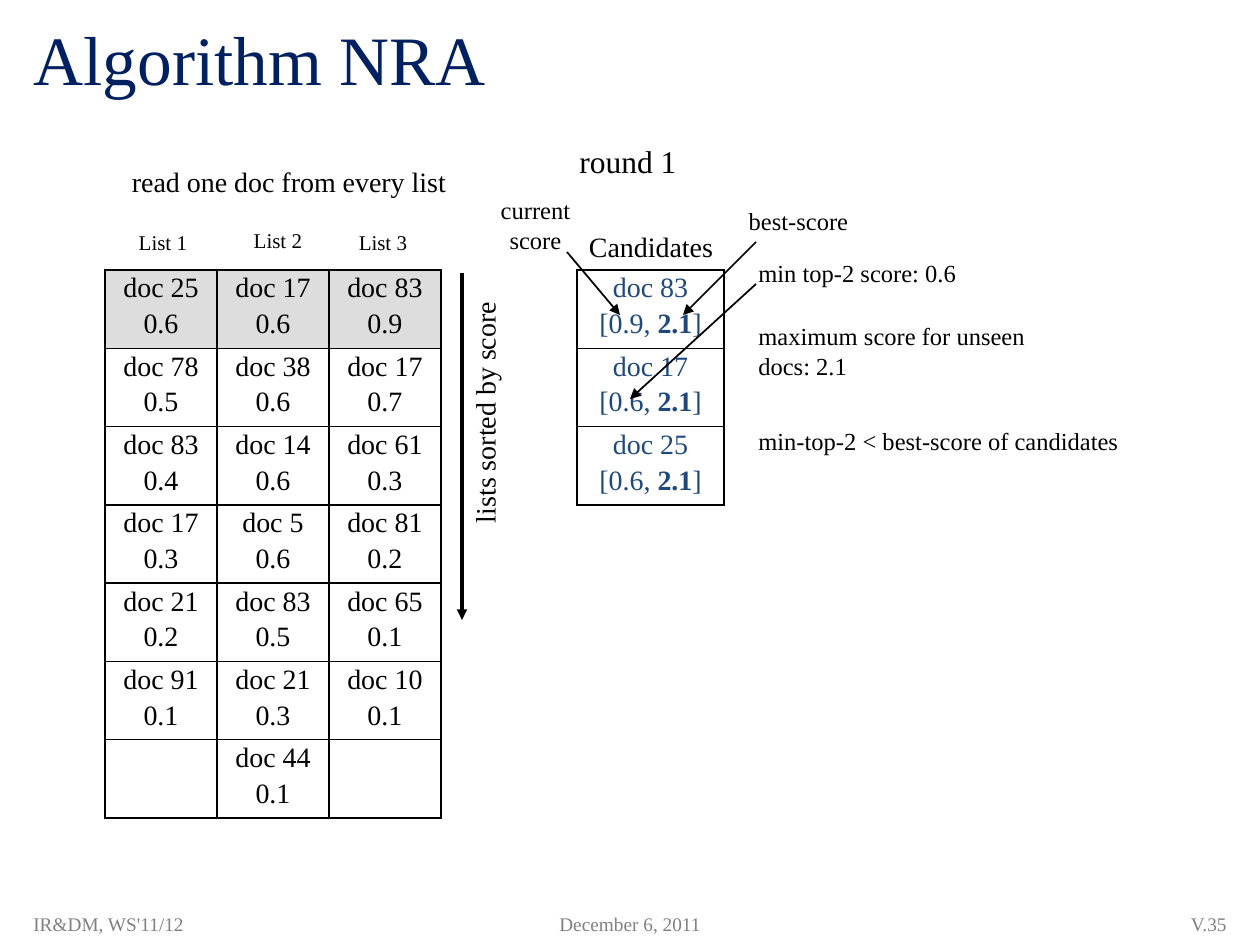
from pptx import Presentation
from pptx.dml.color import RGBColor as Rgb
from pptx.enum.shapes import MSO_CONNECTOR as Link
from pptx.enum.text import MSO_ANCHOR as Anchor, PP_ALIGN as Align
from pptx.oxml import parse_xml
from pptx.oxml.ns import nsdecls, qn
from pptx.util import Pt
from dataclasses import dataclass

SCALE = 914400 / 126  # EMU in one px


@dataclass(frozen=True)
class Theme:
    face: str = "Times New Roman"
    ink: str = "000000"
    navy: str = "002060"
    blue: str = "1F497D"
    gray: str = "808080"
    shade: str = "DDDDDD"
    title: float = 39.6
    head: int = 18
    body: int = 16
    note: int = 14
    label: int = 12
    foot: int = 11


T = Theme()
ALIGN = {"l": Align.LEFT, "c": Align.CENTER, "r": Align.RIGHT}

LISTS = [
    [("doc 25", "0.6"), ("doc 17", "0.6"), ("doc 83", "0.9")],
    [("doc 78", "0.5"), ("doc 38", "0.6"), ("doc 17", "0.7")],
    [("doc 83", "0.4"), ("doc 14", "0.6"), ("doc 61", "0.3")],
    [("doc 17", "0.3"), ("doc 5", "0.6"), ("doc 81", "0.2")],
    [("doc 21", "0.2"), ("doc 83", "0.5"), ("doc 65", "0.1")],
    [("doc 91", "0.1"), ("doc 21", "0.3"), ("doc 10", "0.1")],
    [(), ("doc 44", "0.1"), ()],
]
RANKED = [("doc 83", "0.9", "2.1"), ("doc 17", "0.6", "2.1"), ("doc 25", "0.6", "2.1")]


def px(*vals):
    return [round(v * SCALE) for v in vals]


def style(font, size, color, bold=False):
    for key, val in {"name": T.face, "size": Pt(size), "bold": bold}.items():
        setattr(font, key, val)
    font.color.rgb = Rgb.from_string(color)


def text(shapes, box, words, size, color=T.ink, align="l", **form):
    """Text box; form holds more values for its frame."""
    shape = shapes.add_textbox(*px(*box))
    frame = shape.text_frame
    for key, val in {"word_wrap": True, **form}.items():
        setattr(frame, key, val)
    para = frame.paragraphs[0]
    para.alignment = ALIGN[align]
    para.add_run().text = words
    style(para.runs[0].font, size, color)
    return shape


def arrow(shapes, start, end, width=1):
    line = shapes.add_connector(Link.STRAIGHT, *px(*start, *end))
    line.line.width = Pt(width)
    line.line.color.rgb = Rgb.from_string(T.ink)
    line.line._get_or_add_ln().append(parse_xml(f'<a:tailEnd {nsdecls("a")} type="triangle"/>'))
    line._element.find(qn("p:spPr")).append(parse_xml(f'<a:effectLst {nsdecls("a")}/>'))


def frame_cell(cell):
    """Thin border on all four sides."""
    props = cell._tc.get_or_add_tcPr()
    for spot, side in enumerate("LRTB"):
        props.insert(spot, parse_xml(
            f'<a:ln{side} {nsdecls("a")} w="12700"><a:solidFill>'
            f'<a:srgbClr val="{T.ink}"/></a:solidFill></a:ln{side}>'))


def fill_cell(cell, paras, color, shade):
    """Each paragraph is a list of (words, bold) runs."""
    edge, rim = px(6, 3)
    for key, val in {"margin_left": edge, "margin_right": edge,
                     "margin_top": rim, "margin_bottom": rim}.items():
        setattr(cell, key, val)
    if shade:
        cell.fill.solid()
        cell.fill.fore_color.rgb = Rgb.from_string(shade)
    else:
        cell.fill.background()
    frame_cell(cell)
    frame = cell.text_frame
    for i, runs in enumerate(paras):
        para = frame.add_paragraph() if i else frame.paragraphs[0]
        para.alignment = Align.CENTER
        if i:
            para.space_before = Pt(2.6)
        for words, bold in runs:
            run = para.add_run()
            run.text = words
            style(run.font, T.body, color, bold)


def table(shapes, left, top, wide, high, rows, color, shade=None):
    """Grid of equal cells; shade marks the first row."""
    count = len(rows[0])
    grid = shapes.add_table(len(rows), count,
                            *px(left, top, wide * count, high * len(rows))).table
    grid.first_row = grid.horz_banding = False
    for col in grid.columns:
        col.width = px(wide)[0]
    for r, row in enumerate(rows):
        grid.rows[r].height = px(high)[0]
        for c, paras in enumerate(row):
            fill_cell(grid.cell(r, c), paras, color, None if r else shade)


def heading(slide, box, words):
    title = slide.shapes.title
    for key, val in zip(("left", "top", "width", "height"), px(*box)):
        setattr(title, key, val)
    frame = title.text_frame
    frame.text = words
    frame.vertical_anchor = Anchor.MIDDLE
    frame.paragraphs[0].alignment = Align.LEFT
    style(frame.paragraphs[0].runs[0].font, T.title, T.navy)


def main():
    deck = Presentation()
    deck.slide_width, deck.slide_height = px(1260, 945)
    slide = deck.slides.add_slide(deck.slide_layouts[5])
    shapes = slide.shapes
    heading(slide, (21, 10, 1218, 95), "Algorithm NRA")

    # Sorted lists
    side = text(shapes, (338, 365, 294, 47), "lists sorted by score", T.body)
    side.rotation = 270
    arrow(shapes, (462, 273), (462, 620), 2)
    rows = [[[[(words, False)] for words in cell] for cell in row] for row in LISTS]
    table(shapes, 105, 270, 112, 78.3, rows, T.ink, T.shade)
    labels = shapes.add_group_shape().shapes
    for name, box in {"List 1": (105, 223, 116, 38), "List 2": (210, 221, 136, 38),
                      "List 3": (325, 223, 116, 38)}.items():
        text(labels, box, name, T.label, align="c")
    text(shapes, (95, 158, 388, 47), "read one doc from every list", T.body, align="c")

    # Candidates
    text(shapes, (567, 136, 560, 50), "round 1", T.head)
    rows = [[[[(doc, False)], [(f"[{low}, ", False), (best, True), ("]", False)]]]
            for doc, low, best in RANKED]
    table(shapes, 577, 270, 147, 78.3, rows, T.blue)
    text(shapes, (546, 223, 210, 47), "Candidates", T.body, align="c")

    # Notes on the scores
    for top, wide, high, words in [
            (252, 252, 42, "min top-2 score: 0.6"),
            (315, 315, 72, "maximum score for unseen docs: 2.1"),
            (420, 431, 42, "min-top-2 < best-score of candidates")]:
        text(shapes, (746, top, wide, high), words, T.note)

    # Score labels with their arrows
    for box, words, start, end in [
            ((462, 189, 147, 72), "current score", (567, 252), (620, 315)),
            ((725, 200, 147, 42), "best-score", (756, 242), (683, 315))]:
        group = shapes.add_group_shape().shapes
        text(group, box, words, T.note, align="c")
        arrow(group, start, end)
    arrow(shapes, (756, 284), (630, 399))

    # Footer
    for left, wide, words, align in [
            (483, 294, "December 6, 2011", "c"),
            (966, 273, "V.35", "r"),
            (21, 378, "IR&DM, WS'11/12", "l")]:
        text(shapes, (left, 903, wide, 42), words, T.foot, T.gray, align,
             vertical_anchor=Anchor.MIDDLE)

    deck.save("out.pptx")


if __name__ == "__main__":
    main()
